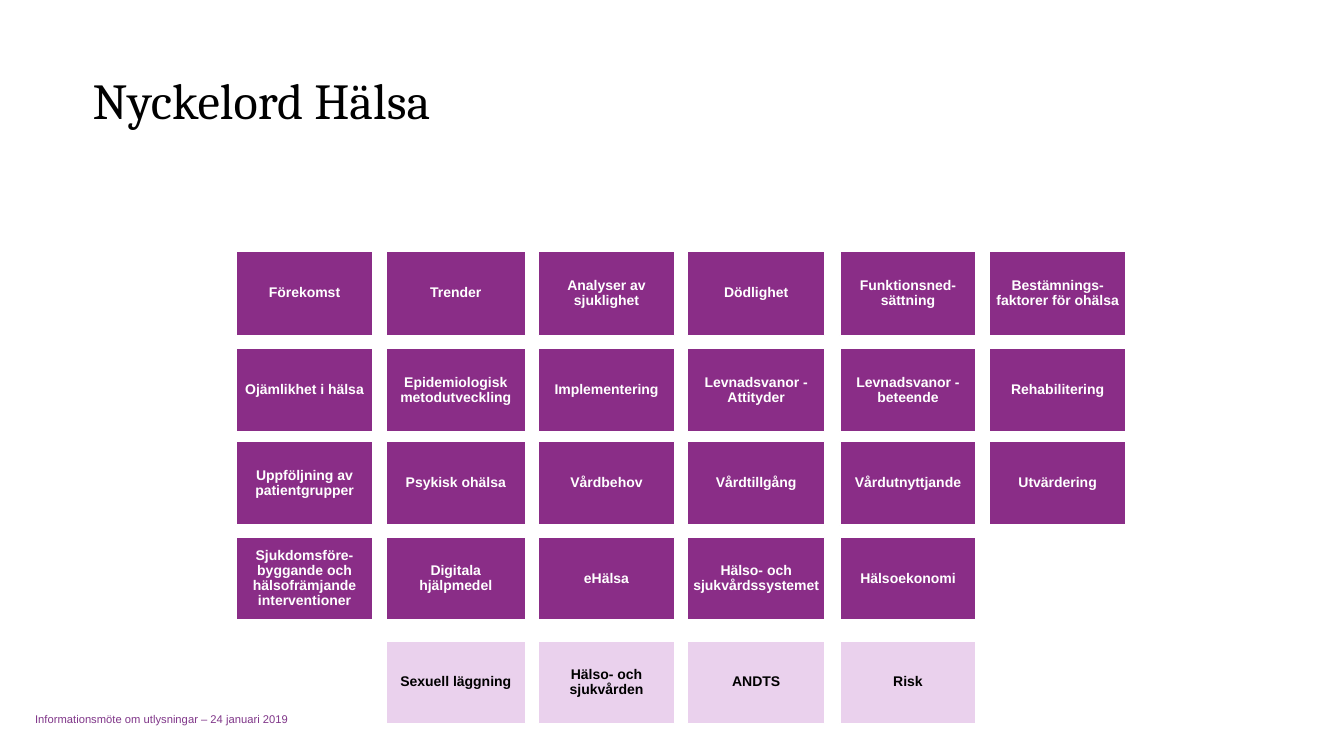
from pptx import Presentation
from pptx.dml.color import RGBColor
from pptx.enum.shapes import MSO_SHAPE
from pptx.enum.text import MSO_ANCHOR, PP_ALIGN
from pptx.util import Emu, Pt

RECTANGLE = MSO_SHAPE.RECTANGLE
MIDDLE = MSO_ANCHOR.MIDDLE
TOP = MSO_ANCHOR.TOP
CENTER = PP_ALIGN.CENTER
LEFT = PP_ALIGN.LEFT

PX = 9144
PURPLE, LILAC, WHITE, BLACK = "8A2D87", "EAD1ED", "FFFFFF", "000000"
FOOTER_PURPLE = "803689"

COLUMNS = [(0, 136), (149, 138), (300, 135), (448, 136), (599, 135), (747, 136)]
ROWS = [(0, 84), (97, 82), (189, 83), (284, 82), (387, 82)]
KEYWORDS = [
    (0, PURPLE, WHITE, ["Förekomst", "Trender", "Analyser av sjuklighet", "Dödlighet",
                        "Funktionsned-sättning", "Bestämnings-faktorer för ohälsa"]),
    (0, PURPLE, WHITE, ["Ojämlikhet i hälsa", "Epidemiologisk metodutveckling",
                        "Implementering", "Levnadsvanor - Attityder",
                        "Levnadsvanor - beteende", "Rehabilitering"]),
    (0, PURPLE, WHITE, ["Uppföljning av patientgrupper", "Psykisk ohälsa", "Vårdbehov",
                        "Vårdtillgång", "Vårdutnyttjande", "Utvärdering"]),
    (0, PURPLE, WHITE, ["Sjukdomsföre-byggande och hälsofrämjande interventioner",
                        "Digitala\nhjälpmedel", "eHälsa",
                        "Hälso- och sjukvårdssystemet", "Hälsoekonomi"]),
    (1, LILAC, BLACK, ["Sexuell läggning", "Hälso- och sjukvården", "ANDTS", "Risk"]),
]


def color(value):
    """Turn a hex string into a colour."""
    return RGBColor.from_string(value)


def px(*lengths):
    """Turn pixel lengths into EMU."""
    return [Emu(length * PX) for length in lengths]


def write(shape, text, font, size, ink, margins, bold=False,
          align=LEFT, anchor=TOP, spacing=1.0):
    """Write one paragraph into a shape, with breaks at newlines."""
    frame = shape.text_frame
    frame.word_wrap = True
    frame.vertical_anchor = anchor
    horizontal, vertical = px(*margins)
    frame.margin_left = frame.margin_right = horizontal
    frame.margin_top = frame.margin_bottom = vertical
    paragraph = frame.paragraphs[0]
    paragraph.alignment = align
    paragraph.line_spacing = spacing
    for index, line in enumerate(text.split("\n")):
        if index:
            paragraph.add_line_break()
        run = paragraph.add_run()
        run.text = line
        run.font.name = font
        run.font.size = Pt(size)
        run.font.bold = bold
        run.font.color.rgb = color(ink)


def add_title(slide, box):
    """Add the slide title."""
    shape = slide.shapes.add_textbox(*px(*box))
    write(shape, "Nyckelord Hälsa", "Cambria", 36, BLACK, (0, 0), spacing=0.9)


def add_tile(slide, box, text, fill, ink):
    """Add one keyword tile."""
    shape = slide.shapes.add_shape(RECTANGLE, *px(*box))
    shape.shadow.inherit = False
    shape.fill.solid()
    shape.fill.fore_color.rgb = color(fill)
    shape.line.color.rgb = color(WHITE)
    shape.line.width = Pt(1)
    write(shape, text, "Arial", 10, ink, (3, 3), bold=True,
          align=CENTER, anchor=MIDDLE, spacing=0.9)


def add_keyword_grid(slide, left, top):
    """Add the keyword tiles row by row from the given corner."""
    for (row_top, height), (first, fill, ink, words) in zip(ROWS, KEYWORDS):
        for (column_left, width), word in zip(COLUMNS[first:], words):
            box = (left + column_left, top + row_top, width, height)
            add_tile(slide, box, word, fill, ink)


def add_footer(slide, box):
    """Add the footer line."""
    shape = slide.shapes.add_textbox(*px(*box))
    write(shape, "Informationsmöte om utlysningar – 24 januari 2019",
          "Arial", 8, FOOTER_PURPLE, (10, 5))


def main():
    """Build and save the presentation."""
    presentation = Presentation()
    presentation.slide_width, presentation.slide_height = px(1333, 750)
    slide = presentation.slides.add_slide(presentation.slide_layouts[6])
    add_keyword_grid(slide, 234, 249)
    add_title(slide, (92, 75, 1150, 110))
    add_footer(slide, (25, 702, 450, 28))
    presentation.save("out.pptx")


if __name__ == "__main__":
    main()
